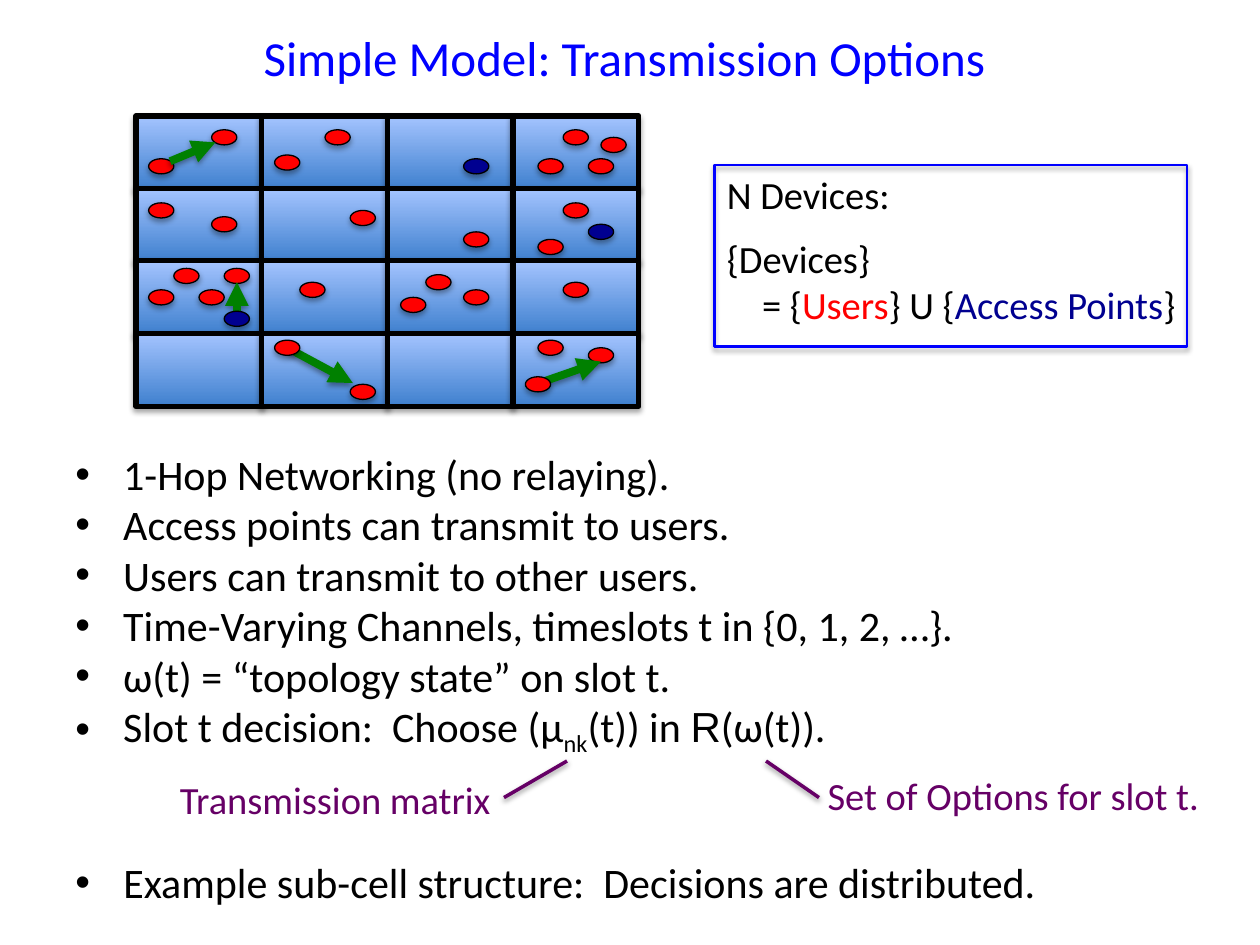
from lxml import etree
from pptx import Presentation
from pptx.dml.color import RGBColor
from pptx.enum import shapes, text
from pptx.oxml import ns
from pptx.util import Inches, Pt

BLACK = RGBColor(0, 0, 0)
BLUE = RGBColor(0, 0, 255)
NAVY = RGBColor(0, 0, 0x90)
RED = RGBColor(255, 0, 0)
GREEN = RGBColor(0, 0x80, 0)
PURPLE = RGBColor(0x66, 0, 0x66)
LIGHT = RGBColor(0xA4, 0xC4, 0xFF)
DARK = RGBColor(0x3F, 0x80, 0xCE)

prs = Presentation()
prs.slide_width, prs.slide_height = Inches(10), Inches(7.5)
slide = prs.slides.add_slide(prs.slide_layouts[6])


def shade(item, alpha=35, dist=1.8):
    """Give a shape or connector a soft shadow below it; call once its line is set."""
    fx = etree.SubElement(item._element.spPr, ns.qn("a:effectLst"))
    cast = etree.SubElement(fx, ns.qn("a:outerShdw"), blurRad=str(Pt(3.1)),
                            dist=str(Pt(dist)), dir="5400000", rotWithShape="0")
    tint = etree.SubElement(cast, ns.qn("a:srgbClr"), val=str(BLACK))
    etree.SubElement(tint, ns.qn("a:alpha"), val=str(alpha * 1000))


def write(paras, box, size=24, color=BLACK, wrap=False, bullet=False,
          align=text.PP_ALIGN.LEFT):
    """Add a text box; a paragraph is a list of (text, format) runs or one string."""
    frame = slide.shapes.add_textbox(*map(Inches, box)).text_frame
    frame.word_wrap = wrap
    frame.auto_size = text.MSO_AUTO_SIZE.SHAPE_TO_FIT_TEXT
    for i, runs in enumerate(paras):
        para = frame.add_paragraph() if i else frame.paragraphs[0]
        para.alignment = align
        if bullet:
            props = para._p.get_or_add_pPr()
            props.set("marL", str(Inches(0.38)))
            props.set("indent", str(Inches(-0.38)))
            etree.SubElement(props, ns.qn("a:buFont"), typeface="Arial")
            etree.SubElement(props, ns.qn("a:buChar"), char="•")
        for words, form in [(runs, {})] if isinstance(runs, str) else runs:
            run = para.add_run()
            run.text = words
            run.font.size = Pt(size)
            run.font.name = form.get("font", "Calibri")
            run.font.color.rgb = form.get("color", color)
            if "base" in form:
                run._r.get_or_add_rPr().set("baseline", str(form["base"] * 1000))
    return frame


write(["Simple Model: Transmission Options"], (1.94, 0.17, 6.03, 0.57),
      size=28, color=BLUE, align=text.PP_ALIGN.CENTER)

write([
    "1-Hop Networking (no relaying).",
    "Access points can transmit to users.",
    "Users can transmit to other users.",
    "Time-Varying Channels, timeslots t in {0, 1, 2, …}.",
    "ω(t) = “topology state” on slot t.",
    [("Slot t decision:  Choose (μ", {}), ("nk", {"base": -25}), ("(t)) in ", {}),
     ("R", {"font": "Arial"}), ("(ω(t)).", {})],
], (0.5, 3.51, 9.33, 2.52), wrap=True, bullet=True)

# Network: a grid of cells, with devices and transmissions
net = slide.shapes.add_group_shape().shapes
for row in range(4):
    for col in range(4):
        cell = net.add_shape(shapes.MSO_SHAPE.RECTANGLE,
                             Inches(1.08 + col * 0.997), Inches(0.92 + row * 0.575),
                             Inches(1), Inches(0.58))
        cell.fill.gradient()
        cell.fill.gradient_angle = 90
        for stop, color in zip(cell.fill.gradient_stops, (DARK, LIGHT)):
            stop.color.rgb = color
        cell.line.color.rgb = BLACK
        cell.line.width = Pt(3)
        shade(cell)

users = [
    (2.18, 1.23), (2.58, 1.03), (2.78, 1.67), (2.38, 2.24), (3.18, 2.36), (3.38, 2.18),
    (3.68, 2.3), (3.68, 1.84), (4.27, 1.26), (4.47, 1.03), (4.67, 1.26), (4.77, 1.09),
    (4.47, 1.61), (4.27, 1.9), (4.47, 2.24), (4.67, 2.76), (2.78, 3.05), (1.18, 2.3),
    (1.38, 2.13), (1.58, 2.3), (1.78, 2.13), (1.68, 1.72), (1.18, 1.61), (1.18, 1.26),
    (1.68, 1.03),
]
points = [(3.68, 1.26), (4.67, 1.78)]
links = [(1.35, 1.28, 1.71, 1.13), (2.28, 2.76, 2.8, 3.04),
         (4.28, 3.04, 4.77, 2.87), (1.88, 2.53, 1.88, 2.24)]
front = [(2.18, 2.7), (4.27, 2.7), (4.17, 2.99)]

# Links lie above the first devices and below the last ones
marks = [(spot, RED) for spot in users] + [(spot, NAVY) for spot in points]
marks += [(ends, GREEN) for ends in links]
marks += [(spot, RED) for spot in front] + [((1.78, 2.47), NAVY)]
for place, color in marks:
    if color == GREEN:
        link = net.add_connector(shapes.MSO_CONNECTOR.STRAIGHT, *map(Inches, place))
        link.line.color.rgb = color
        link.line.width = Pt(4.5)
        etree.SubElement(link.line._get_or_add_ln(), ns.qn("a:tailEnd"), type="triangle")
        shade(link, alpha=38, dist=1.6)
    else:
        dot = net.add_shape(shapes.MSO_SHAPE.OVAL, *map(Inches, place),
                            Inches(0.2), Inches(0.12))
        dot.fill.solid()
        dot.fill.fore_color.rgb = color
        dot.line.color.rgb = BLACK
        dot.line.width = Pt(0.75)
        shade(dot)

# Device legend
legend = write([
    "N Devices:",
    "{Devices}",
    [("= {", {}), ("Users", {"color": RED}), ("} U {", {}),
     ("Access Points", {"color": NAVY}), ("}", {})],
], (5.67, 1.31, 3.92, 1.35), size=22, wrap=True)
legend.paragraphs[1].space_before = Pt(10)
legend.paragraphs[2]._p.get_or_add_pPr().set("marL", str(Inches(0.28)))
frame = slide.shapes.add_shape(shapes.MSO_SHAPE.RECTANGLE, Inches(5.67), Inches(1.31),
                               Inches(3.75), Inches(1.44))
frame.fill.background()
frame.line.color.rgb = BLUE
frame.line.width = Pt(1.5)
shade(frame)

# Notes on the slot decision
for words, box, ends in [
    ("Transmission matrix", (1.33, 6.11, 2.73, 0.47), (4, 6.33, 4.5, 6.04)),
    ("Set of Options for slot t.", (6.47, 6.08, 3.19, 0.47), (6.5, 6.33, 6.08, 6.04)),
]:
    write([words], box, size=22, color=PURPLE)
    lead = slide.shapes.add_connector(shapes.MSO_CONNECTOR.STRAIGHT, *map(Inches, ends))
    lead.line.color.rgb = PURPLE
    lead.line.width = Pt(2)
    shade(lead, alpha=38, dist=1.6)

write(["Example sub-cell structure:  Decisions are distributed."],
      (0.5, 6.75, 7.99, 0.5), bullet=True)

prs.save("out.pptx")
